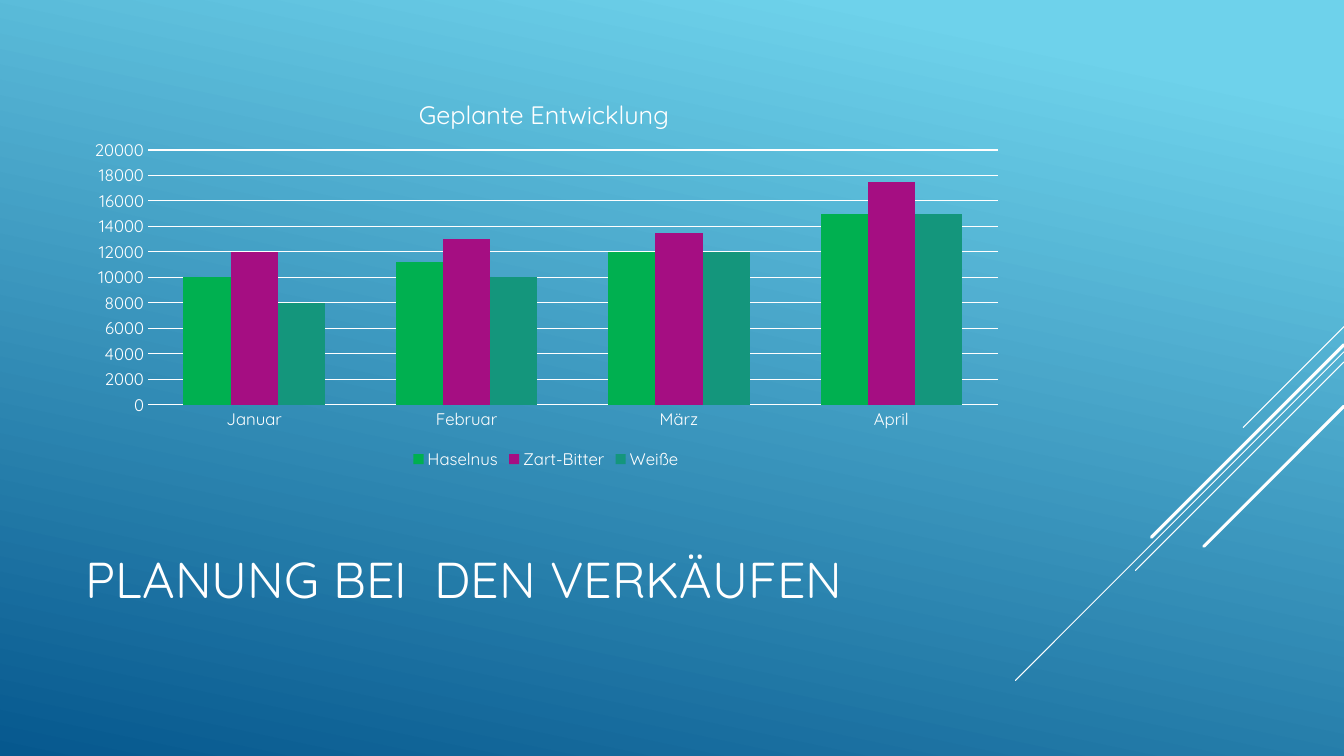
from lxml import etree
from pptx import Presentation
from pptx.chart.data import CategoryChartData
from pptx.dml.color import RGBColor
from pptx.enum.chart import XL_CHART_TYPE, XL_LEGEND_POSITION, XL_TICK_MARK
from pptx.enum.shapes import MSO_CONNECTOR
from pptx.enum.text import MSO_ANCHOR, MSO_AUTO_SIZE, PP_ALIGN
from pptx.oxml.ns import qn
from pptx.util import Pt

COLUMNS = XL_CHART_TYPE.COLUMN_CLUSTERED
BOTTOM = XL_LEGEND_POSITION.BOTTOM
NO_TICK = XL_TICK_MARK.NONE
STRAIGHT = MSO_CONNECTOR.STRAIGHT
MIDDLE = MSO_ANCHOR.MIDDLE
NO_FIT = MSO_AUTO_SIZE.NONE
LEFT = PP_ALIGN.LEFT

FONT = "Quicksand"
COLORS = {"white": "FFFFFF", "sky": "6ED2EB", "navy": "06588E",
          "green": "00B050", "purple": "A50E82", "teal": "14967C"}

TITLE = "PLANUNG BEI  DEN VERKÄUFEN"
CHART_TITLE = "Geplante Entwicklung"
MONTHS = ["Januar", "Februar", "März", "April"]
SALES = [
    ("Haselnus", "green", (10000, 11200, 12000, 15000)),
    ("Zart-Bitter", "purple", (12000, 13000, 13500, 17500)),
    ("Weiße", "teal", (8000, 10000, 12000, 15000)),
]

WIDTH, HEIGHT = 960, 540
MARGIN, CONTENT_W = 54, 672
CHART_H = 284.4
TITLE_TOP, TITLE_H = 353.5, 118.8
# Diagonals rise at 45 degrees to the right edge: top, run, line width
DIAGONALS = [(233.3, 72, 0.75), (251.3, 234.7, 0.75), (258.5, 149, 0.75),
             (246.2, 137.5, 2.25), (290.2, 100.1, 2.25)]
# Shares of the chart's width and height
PLOT_LAYOUT = {"layoutTarget": "inner", "xMode": "edge", "yMode": "edge",
               "x": 0.077, "y": 0.187, "w": 0.903, "h": 0.64}
TITLE_LAYOUT = {"xMode": "edge", "yMode": "edge", "x": 0.36, "y": 0.04}


def rgb(name):
    return RGBColor.from_string(COLORS[name])


def set_font(font, size):
    for key, value in {"name": FONT, "size": Pt(size), "bold": False}.items():
        setattr(font, key, value)
    font.color.rgb = rgb("white")


def set_layout(element, values):
    """Give a chart part a fixed place within the chart."""
    layout = element.find(qn("c:layout"))
    if layout is None:
        layout = etree.Element(qn("c:layout"))
        text = element.find(qn("c:tx"))
        element.insert(0 if text is None else 1, layout)
    for child in list(layout):
        layout.remove(child)
    manual = etree.SubElement(layout, qn("c:manualLayout"))
    for key, value in values.items():
        etree.SubElement(manual, qn(f"c:{key}")).set("val", str(value))


def add_background(slide):
    fill = slide.background.fill
    fill.gradient()
    fill.gradient_angle = 258
    for stop, (name, position) in zip(fill.gradient_stops,
                                      [("sky", 0.1), ("navy", 1)]):
        stop.color.rgb = rgb(name)
        stop.position = position


def add_diagonals(slide):
    for top, run, width in DIAGONALS:
        line = slide.shapes.add_connector(
            STRAIGHT, Pt(WIDTH), Pt(top), Pt(WIDTH - run), Pt(top + run))
        line.line.color.rgb = rgb("white")
        line.line.width = Pt(width)
        props = line._element.spPr
        props.find(qn("a:ln")).set("cap", "rnd")
        etree.SubElement(props, qn("a:effectLst"))


def add_title(slide):
    sp = slide.shapes.title
    box = {"left": MARGIN, "top": TITLE_TOP, "width": CONTENT_W, "height": TITLE_H}
    for key, value in box.items():
        setattr(sp, key, Pt(value))
    tf = sp.text_frame
    tf.text = TITLE
    for key, value in {"vertical_anchor": MIDDLE, "word_wrap": True,
                       "auto_size": NO_FIT}.items():
        setattr(tf, key, value)
    p = tf.paragraphs[0]
    p.alignment = LEFT
    set_font(p.runs[0].font, 36)


def add_sales_chart(slide):
    data = CategoryChartData()
    data.categories = MONTHS
    for name, _, values in SALES:
        data.add_series(name, values)
    chart = slide.shapes.add_chart(COLUMNS, Pt(MARGIN), Pt(MARGIN),
                                   Pt(CONTENT_W), Pt(CHART_H), data).chart
    set_font(chart.font, 10)

    chart.has_title = True
    tf = chart.chart_title.text_frame
    tf.text = CHART_TITLE
    set_font(tf.paragraphs[0].runs[0].font, 18)
    chart.chart_title.include_in_layout = False
    set_layout(chart.chart_title._element, TITLE_LAYOUT)

    chart.has_legend = True
    chart.legend.position = BOTTOM
    chart.legend.include_in_layout = False
    set_font(chart.legend.font, 12)

    plot = chart.plots[0]
    for key, value in {"gap_width": 150, "overlap": 0,
                       "vary_by_categories": False}.items():
        setattr(plot, key, value)
    for series, (_, color, _) in zip(plot.series, SALES):
        series.format.fill.solid()
        series.format.fill.fore_color.rgb = rgb(color)

    for axis in (chart.category_axis, chart.value_axis):
        axis.major_tick_mark = axis.minor_tick_mark = NO_TICK
        axis.format.line.fill.background()
        set_font(axis.tick_labels.font, 12)
    axis = chart.value_axis
    for key, value in {"minimum_scale": 0, "maximum_scale": 20000,
                       "major_unit": 2000, "has_major_gridlines": True}.items():
        setattr(axis, key, value)
    grid = axis.major_gridlines.format.line
    grid.color.rgb = rgb("white")
    grid.width = Pt(0.75)
    set_layout(chart._chartSpace.chart.plotArea, PLOT_LAYOUT)


def main():
    prs = Presentation()
    prs.slide_width, prs.slide_height = Pt(WIDTH), Pt(HEIGHT)
    slide = prs.slides.add_slide(prs.slide_layouts[5])
    add_background(slide)
    add_diagonals(slide)
    add_title(slide)
    add_sales_chart(slide)
    prs.save("out.pptx")


if __name__ == "__main__":
    main()
